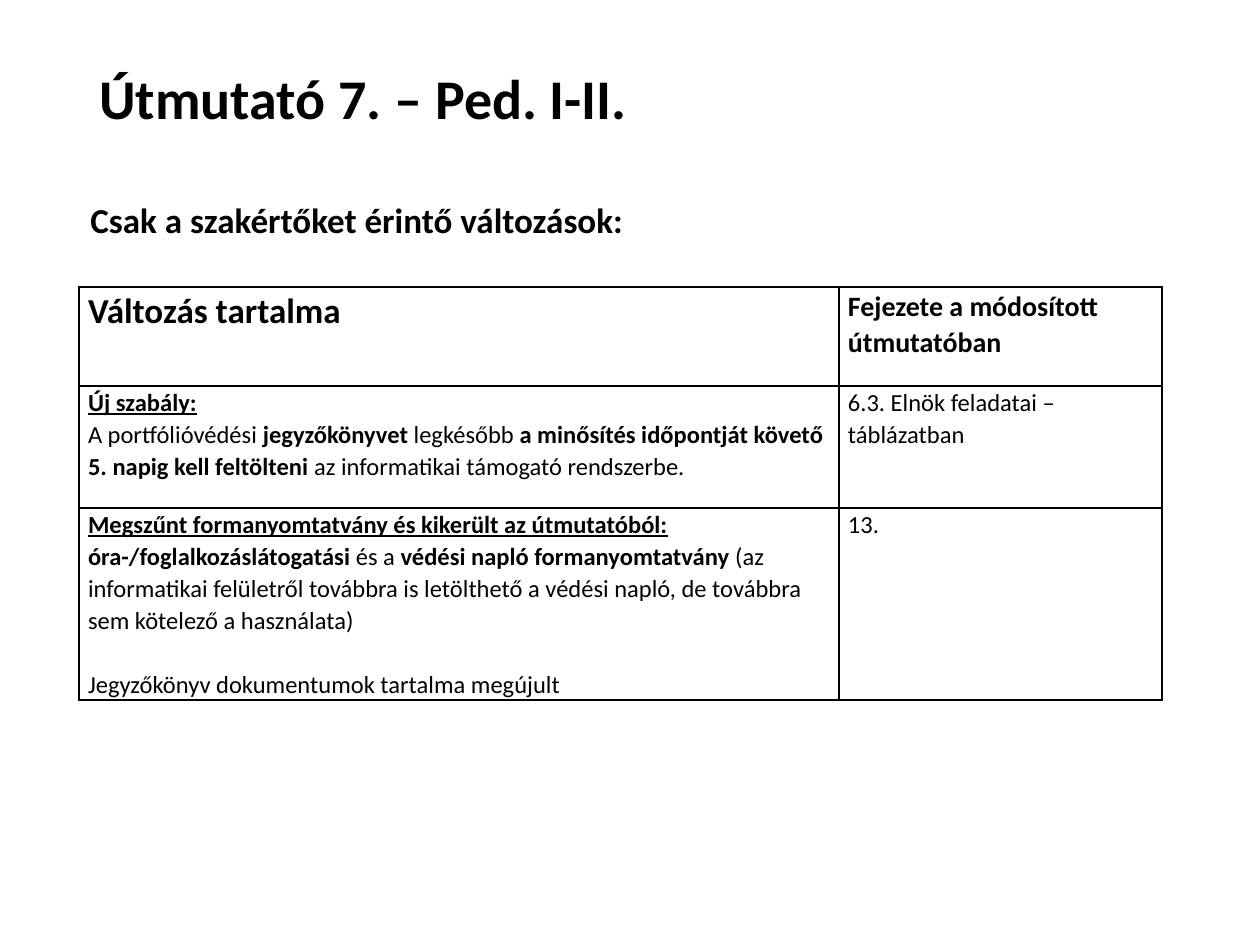
from lxml import etree
from pptx import Presentation
from pptx import util as u
from pptx.dml.color import RGBColor
from pptx.enum import text
from pptx.oxml import ns

PX_PER_INCH = 126
COLORS = {"ink": "000000", "paper": "FFFFFF"}
FONT = "Calibri"
BODY_SPACING = 1.07
BLANK_LINE = 18.3  # height in points of one line of body text

# A paragraph is a list of (wording, style) runs; style: "" plain, "b" bold, "u" underlined.
# A cell is (size, gap before its last paragraph, paragraphs).
CHANGES = [
    [
        (20, 0, [[("Változás tartalma", "b")]]),
        (16, 0, [[("Fejezete a módosított útmutatóban", "b")]]),
    ],
    [
        (14, 0, [
            [("Új szabály:", "bu")],
            [("A portfólióvédési ", ""), ("jegyzőkönyvet", "b"), (" legkésőbb ", ""),
             ("a minősítés időpontját követő 5. napig kell feltölteni ", "b"),
             ("az informatikai támogató rendszerbe.", "")],
        ]),
        (14, 0, [[("6.3. Elnök feladatai – táblázatban", "")]]),
    ],
    [
        (14, BLANK_LINE, [
            [("Megszűnt formanyomtatvány és kikerült az útmutatóból:", "bu")],
            [("óra-/foglalkozáslátogatási", "b"), (" és a ", ""),
             ("védési napló formanyomtatvány", "b"),
             (" (az informatikai felületről továbbra is letölthető a védési napló, "
              "de továbbra sem kötelező a használata)", "")],
            [("Jegyzőkönyv dokumentumok tartalma megújult", "")],
        ]),
        (14, 0, [[("13.", "")]]),
    ],
]


def px(length):
    return u.Emu(round(length * 914400 / PX_PER_INCH))


def color(name):
    return RGBColor.from_string(COLORS[name])


def add_run(paragraph, wording, style, size):
    run = paragraph.add_run()
    run.text = wording
    run.font.name = FONT
    run.font.size = u.Pt(size)
    run.font.bold = "b" in style
    run.font.underline = "u" in style
    run.font.color.rgb = color("ink")


def add_heading(slide, box, wording, size, spacing):
    frame = slide.shapes.add_textbox(*map(px, box)).text_frame
    frame.word_wrap = True
    frame.vertical_anchor = text.MSO_ANCHOR.MIDDLE
    heading = frame.paragraphs[0]
    heading.line_spacing = spacing
    add_run(heading, wording, "b", size)


def add_borders(cell):
    """Draw a 1 pt line on each side; lines must come before the fill in tcPr."""
    properties = cell._tc.get_or_add_tcPr()
    for position, side in enumerate(("a:lnL", "a:lnR", "a:lnT", "a:lnB")):
        line = etree.Element(ns.qn(side), w=str(u.Pt(1)))
        fill = etree.SubElement(line, ns.qn("a:solidFill"))
        etree.SubElement(fill, ns.qn("a:srgbClr"), val=COLORS["ink"])
        properties.insert(position, line)


def fill_cell(cell, size, last_gap, paragraphs):
    cell.margin_left = cell.margin_right = px(9)
    cell.margin_top = cell.margin_bottom = 0
    cell.fill.background()
    add_borders(cell)
    frame = cell.text_frame
    for index, runs in enumerate(paragraphs):
        paragraph = frame.add_paragraph() if index else frame.paragraphs[0]
        paragraph.line_spacing = BODY_SPACING
        for wording, style in runs:
            add_run(paragraph, wording, style, size)
    if last_gap:
        paragraph.space_before = u.Pt(last_gap)


def add_changes_table(slide, left, top, widths, heights):
    table = slide.shapes.add_table(
        len(heights), len(widths), px(left), px(top), px(sum(widths)), px(sum(heights))
    ).table
    table.first_row = table.horz_banding = False
    for column, width in zip(table.columns, widths):
        column.width = px(width)
    for row, height, contents in zip(table.rows, heights, CHANGES):
        row.height = px(height)
        for cell, content in zip(row.cells, contents):
            fill_cell(cell, *content)


def build_slide(presentation):
    slide = presentation.slides.add_slide(presentation.slide_layouts[6])
    slide.background.fill.solid()
    slide.background.fill.fore_color.rgb = color("paper")
    add_heading(slide, (87, 50, 1086, 102), "Útmutató 7. – Ped. I-II.", 32, 0.9)
    add_changes_table(slide, 79, 287, (760, 323), (99, 122, 192))
    add_heading(slide, (78, 192, 1086, 55), "Csak a szakértőket érintő változások:", 20, 1.0)


def main():
    presentation = Presentation()
    presentation.slide_width, presentation.slide_height = px(1260), px(945)
    build_slide(presentation)
    presentation.save("out.pptx")


if __name__ == "__main__":
    main()
